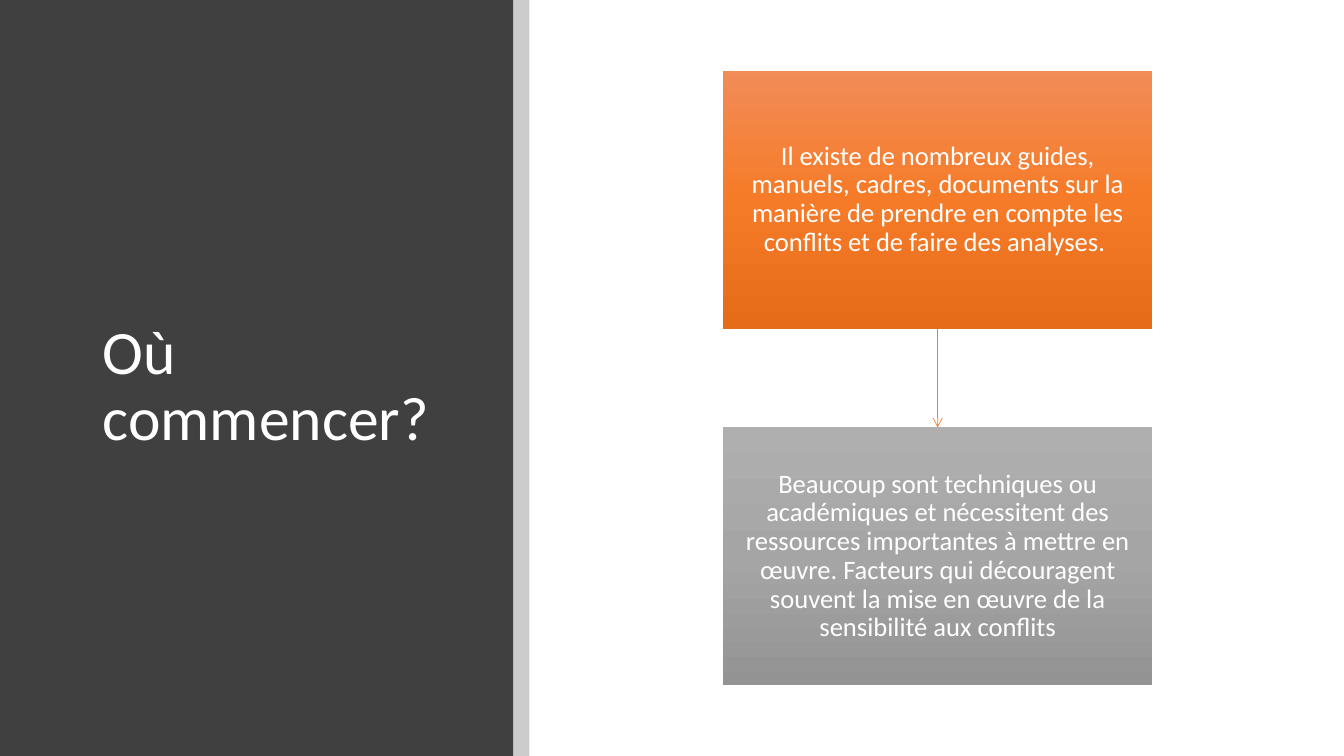
"""Build the slide "Où commencer?": a dark title panel beside two linked boxes."""
from copy import deepcopy

from lxml.etree import SubElement
from pptx import Presentation
from pptx.dml.color import RGBColor
from pptx.enum.shapes import MSO_CONNECTOR, MSO_SHAPE
from pptx.enum.text import MSO_ANCHOR, PP_ALIGN
from pptx.oxml.ns import qn
from pptx.util import Inches, Pt


def rgb(hex_code):
    """Turn a hex string into a colour."""
    return RGBColor.from_string(hex_code)


def write(shape, text, size, align=PP_ALIGN.LEFT, inset_x=0.1, inset_y=0.05):
    """Put white, vertically centred text into a shape."""
    frame = shape.text_frame
    frame.word_wrap = True
    frame.vertical_anchor = MSO_ANCHOR.MIDDLE
    frame.margin_left = frame.margin_right = Inches(inset_x)
    frame.margin_top = frame.margin_bottom = Inches(inset_y)
    paragraph = frame.paragraphs[0]
    paragraph.alignment = align
    paragraph.line_spacing = 0.9
    run = paragraph.add_run()
    run.text = text
    run.font.size = Pt(size)
    run.font.name = "Calibri"
    run.font.color.rgb = rgb("FFFFFF")


presentation = Presentation()
presentation.slide_width = Inches(13.33)
presentation.slide_height = Inches(7.5)
slide = presentation.slides.add_slide(presentation.slide_layouts[6])
shapes = slide.shapes

for left, width, color, opacity in [(0, 5.09, "404040", 100), (5.09, 0.16, "000000", 20)]:
    band = shapes.add_shape(
        MSO_SHAPE.RECTANGLE, Inches(left), 0, Inches(width), presentation.slide_height)
    band.shadow.inherit = False
    band.line.fill.background()
    band.fill.solid()
    band.fill.fore_color.rgb = rgb(color)
    if opacity < 100:
        color_node = band.fill._xPr.find(qn("a:solidFill"))[0]
        SubElement(color_node, qn("a:alpha"), val=str(opacity * 1000))

title = shapes.add_textbox(Inches(0.92), Inches(0.89), Inches(3.65), Inches(5.91))
write(title, "Où commencer?", 44)

statements = [
    ("Il existe de nombreux guides, manuels, cadres, documents sur la manière "
     "de prendre en compte les conflits et de faire des analyses. ",
     ["F18C57", "F67B28", "E56C19"]),
    ("Beaucoup sont techniques ou académiques et nécessitent des ressources "
     "importantes à mettre en œuvre. Facteurs qui découragent souvent la mise "
     "en œuvre de la sensibilité aux conflits",
     ["AFAFAF", "A5A5A5", "939393"]),
]
boxes = []
for index, (statement, colors) in enumerate(statements):
    box = shapes.add_shape(
        MSO_SHAPE.RECTANGLE, Inches(7.17), Inches(0.7 + 3.54 * index),
        Inches(4.26), Inches(2.56))
    box.shadow.inherit = False
    box.line.fill.background()
    box.fill.gradient()
    box.fill.gradient_angle = 270
    stop_list = box.fill._xPr.find(qn("a:gradFill")).find(qn("a:gsLst"))
    stop_list.append(deepcopy(stop_list[0]))
    for stop, color, position in zip(box.fill.gradient_stops, colors, [0, 0.5, 1]):
        stop.color.rgb = rgb(color)
        stop.position = position
    write(box, statement, 19, align=PP_ALIGN.CENTER, inset_x=0.21, inset_y=0.22)
    boxes.append(box)

arrow = shapes.add_connector(
    MSO_CONNECTOR.STRAIGHT, Inches(9.3), Inches(3.26), Inches(9.3), Inches(4.2))
arrow.begin_connect(boxes[0], 2)
arrow.end_connect(boxes[1], 0)
arrow.line.color.rgb = rgb("ED7D31")
arrow.line.width = Pt(0.5)
SubElement(arrow.line._get_or_add_ln(), qn("a:tailEnd"), type="arrow")
SubElement(arrow._element.spPr, qn("a:effectLst"))

presentation.save("out.pptx")
